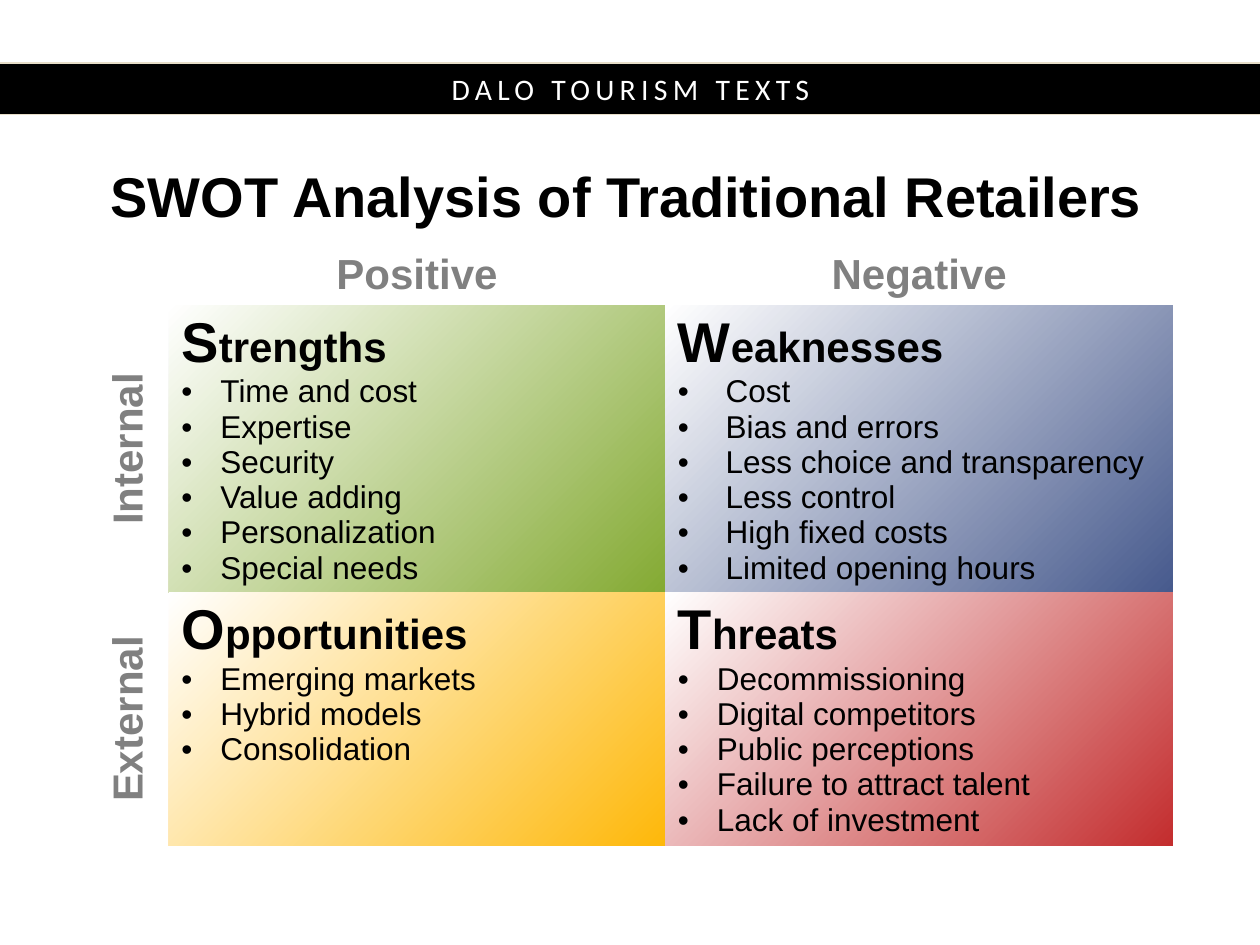
from lxml.etree import SubElement
from pptx import Presentation
from pptx.dml.color import RGBColor
from pptx.enum.shapes import MSO_SHAPE
from pptx.enum.text import MSO_ANCHOR, PP_ALIGN
from pptx.oxml import parse_xml
from pptx.oxml.ns import nsdecls, qn
from pptx.util import Inches, Pt

COLUMNS = (0.56, 3.94, 4.03)
ROWS = (0.47, 2.28, 2.01)
LEFT, TOP = 0.78, 1.95
NO_STYLE = "{2D5ABB26-0587-4C30-8999-92F81FD0307C}"
BLACK, WHITE, GREY = "000000", "FFFFFF", "808080"

QUADRANTS = (
    (1, 1, "84AA33", 0.31, "Strengths",
     ("Time and cost", "Expertise", "Security", "Value adding",
      "Personalization", "Special needs")),
    (1, 2, "475A8D", 0.38, "Weaknesses",
     ("Cost", "Bias and errors", "Less choice and transparency",
      "Less control", "High fixed costs", "Limited opening hours")),
    (2, 1, "FEB80A", 0.31, "Opportunities",
     ("Emerging markets", "Hybrid models", "Consolidation")),
    (2, 2, "C32D2E", 0.31, "Threats",
     ("Decommissioning", "Digital competitors", "Public perceptions",
      "Failure to attract talent", "Lack of investment")),
)


def color(value):
    return RGBColor.from_string(value)


def add_text(paragraph, text, size=18, fill=BLACK, bold=False, font="Arial",
             align=PP_ALIGN.LEFT, tracking=0):
    paragraph.alignment = align
    run = paragraph.add_run()
    run.text = text
    run.font.name = font
    run.font.size = Pt(size)
    run.font.bold = bold
    run.font.color.rgb = color(fill)
    if tracking:
        run.font._element.set("spc", str(tracking * 100))


def add_bullet(paragraph, text, indent):
    properties = paragraph._p.get_or_add_pPr()
    properties.set("marL", str(Inches(indent)))
    properties.set("indent", str(-Inches(indent)))
    SubElement(properties, qn("a:buFont"), typeface="Arial")
    SubElement(properties, qn("a:buChar"), char="•")
    add_text(paragraph, text)


def fill_corner(cell, corner):
    stops = "".join(
        f'<a:gs pos="{position}"><a:srgbClr val="{value}"/></a:gs>'
        for position, value in ((0, corner), (100000, WHITE)))
    cell._tc.get_or_add_tcPr().append(parse_xml(
        f'<a:gradFill {nsdecls("a")} rotWithShape="1"><a:gsLst>{stops}</a:gsLst>'
        '<a:path path="circle"><a:fillToRect l="100000" t="100000"/></a:path>'
        '<a:tileRect r="-100000" b="-100000"/></a:gradFill>'))


def add_banner(slide, text):
    banner = slide.shapes.add_shape(
        MSO_SHAPE.RECTANGLE, Inches(-0.08), Inches(0.5), Inches(10.17), Inches(0.41))
    banner.shadow.inherit = False
    banner.fill.solid()
    banner.fill.fore_color.rgb = color(BLACK)
    banner.line.color.rgb = color("E7DEC9")
    banner.line.width = Pt(0.75)
    banner.text_frame.vertical_anchor = MSO_ANCHOR.MIDDLE
    add_text(banner.text_frame.paragraphs[0], text, size=17, fill=WHITE,
             font="Calibri", align=PP_ALIGN.CENTER, tracking=3)


def add_title(slide, text):
    title = slide.shapes.add_textbox(
        Inches(LEFT), Inches(1.35), Inches(sum(COLUMNS)), Inches(0.48))
    title.text_frame.word_wrap = True
    title.text_frame.vertical_anchor = MSO_ANCHOR.MIDDLE
    paragraph = title.text_frame.paragraphs[0]
    paragraph.line_spacing = Pt(32)
    add_text(paragraph, text, size=32, bold=True)


def add_grid(slide):
    table = slide.shapes.add_table(
        len(ROWS), len(COLUMNS), Inches(LEFT), Inches(TOP),
        Inches(sum(COLUMNS)), Inches(sum(ROWS))).table
    table.first_row = table.horz_banding = False
    table._tbl.tblPr.find(qn("a:tableStyleId")).text = NO_STYLE
    for column, width in zip(table.columns, COLUMNS):
        column.width = Inches(width)
    for row, height in zip(table.rows, ROWS):
        row.height = Inches(height)
    table.cell(0, 0).fill.background()
    return table


def add_heading(cell, text, upright=True):
    cell.fill.background()
    if not upright:
        cell._tc.get_or_add_tcPr().set("vert", "vert270")
    add_text(cell.text_frame.paragraphs[0], text, size=24, fill=GREY,
             bold=True, align=PP_ALIGN.CENTER)


def add_quadrant(cell, corner, indent, name, items):
    fill_corner(cell, corner)
    heading = cell.text_frame.paragraphs[0]
    add_text(heading, name[0], size=32, bold=True)
    add_text(heading, name[1:], size=24, bold=True)
    for item in items:
        add_bullet(cell.text_frame.add_paragraph(), item, indent)


def main():
    presentation = Presentation()
    presentation.slide_width = Inches(10)
    presentation.slide_height = Inches(7.5)
    slide = presentation.slides.add_slide(presentation.slide_layouts[6])
    add_banner(slide, "DALO TOURISM TEXTS")
    table = add_grid(slide)
    for column, text in enumerate(("Positive", "Negative"), 1):
        add_heading(table.cell(0, column), text)
    for row, text in enumerate(("Internal", "External"), 1):
        add_heading(table.cell(row, 0), text, upright=False)
    for row, column, *content in QUADRANTS:
        add_quadrant(table.cell(row, column), *content)
    add_title(slide, "SWOT Analysis of Traditional Retailers")
    presentation.save("out.pptx")


if __name__ == "__main__":
    main()
